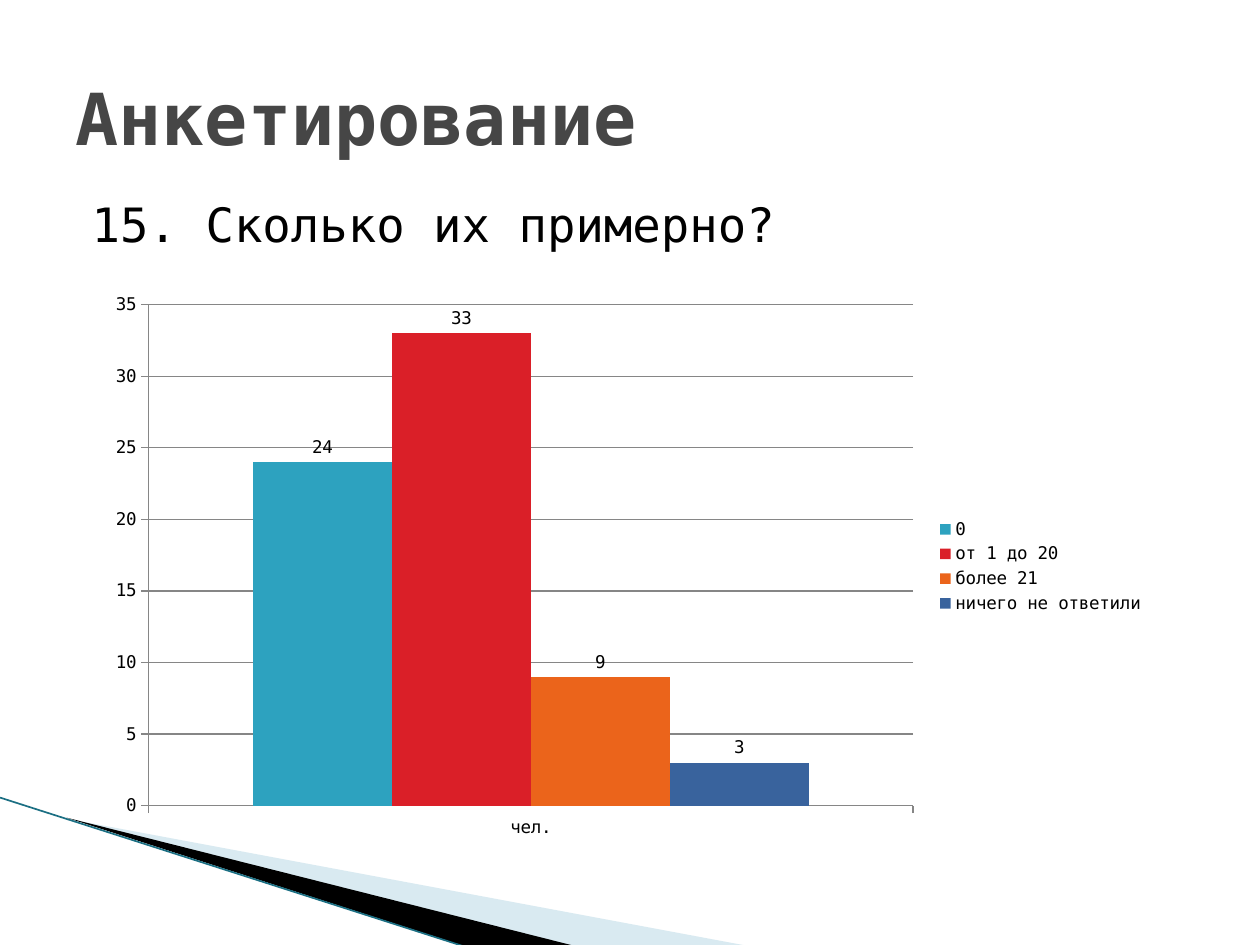
from lxml.etree import SubElement
from pptx import Presentation
from pptx.chart.data import CategoryChartData
from pptx.dml.color import RGBColor
from pptx.enum.chart import XL_CHART_TYPE as ChartType, XL_LABEL_POSITION as LabelPlace
from pptx.enum.chart import XL_LEGEND_POSITION as LegendPlace, XL_TICK_MARK as Tick
from pptx.enum.shapes import MSO_CONNECTOR as Connector
from pptx.enum.text import MSO_ANCHOR as Anchor
from pptx.oxml.ns import qn
from pptx.util import Inches, Pt

FONT = "DejaVu Sans Mono"
COLORS = {
    "title": "464646", "text": "000000", "grid": "868686",
    "pale": "A0CBDC", "dark": "000000", "edge": "1B6F83",
}
ANSWERS = [
    ("0", 24, "2DA2BF"),
    ("от 1 до 20", 33, "DA1F28"),
    ("более 21", 9, "EB641B"),
    ("ничего не ответили", 3, "39639D"),
]
SLIDE = (Inches(10), Inches(7.5))
COLUMNS, ROWS = 100, 75


def place(column, row):
    """Turn a grid position into slide lengths."""
    return round(column * SLIDE[0] / COLUMNS), round(row * SLIDE[1] / ROWS)


def style_font(font, size, color, bold=False):
    """Set the slide's typeface with a size and colour."""
    font.name, font.size, font.bold = FONT, Pt(size), bold
    font.color.rgb = RGBColor.from_string(color)


def add_wedge(page, origin, corners, color, opacity=100):
    """Draw a filled outline with corners relative to its origin."""
    points = [place(origin[0] + x, origin[1] + y) for x, y in corners]
    builder = page.shapes.build_freeform(*points[0])
    builder.add_line_segments(points[1:], close=True)
    wedge = builder.convert_to_shape()
    wedge.shadow.inherit = False
    wedge.fill.solid()
    wedge.fill.fore_color.rgb = RGBColor.from_string(color)
    wedge.line.fill.background()
    if opacity < 100:
        tint = wedge.fill._xPr.find(qn("a:solidFill"))[0]
        SubElement(tint, qn("a:alpha")).set("val", str(opacity * 1000))


def add_swoosh(page, box):
    """Draw the corner decoration inside its box."""
    left, top, width, height = box
    tip = (left + 5.4, top + 1.7)
    add_wedge(page, tip, [(0, 0), (54.1, 10.1), (40.2, 10.1)], COLORS["pale"], 40)
    add_wedge(page, tip, [(-0.1, -0.1), (40.3, 10.1), (31.8, 10.2)], COLORS["dark"])
    edge = page.shapes.add_connector(
        Connector.STRAIGHT, *place(left, top), *place(left + width, top + height))
    edge.line.color.rgb = RGBColor.from_string(COLORS["edge"])
    edge.line.width = Pt(0.95)
    SubElement(edge._element.spPr, qn("a:effectLst"))


def add_text(page, box, text, size, color, bold=False, anchor=Anchor.TOP, indent=None):
    """Write one paragraph in a box, with an optional hanging indent."""
    frame = page.shapes.add_textbox(*place(*box[:2]), *place(*box[2:])).text_frame
    frame.word_wrap = True
    frame.vertical_anchor = anchor
    frame.text = text
    para = frame.paragraphs[0]
    if indent:
        frame.margin_top = Inches(0.08)
        for name, value in zip(("marL", "indent"), indent):
            para._p.get_or_add_pPr().set(name, str(Inches(value)))
    style_font(para.runs[0].font, size, color, bold)


def style_axis(axis):
    """Give an axis crossing ticks and a thin grey line."""
    axis.major_tick_mark = Tick.OUTSIDE
    axis.minor_tick_mark = Tick.NONE
    axis.format.line.color.rgb = RGBColor.from_string(COLORS["grid"])
    axis.format.line.width = Pt(0.75)


def add_answers(page, box):
    """Chart the number of people behind each answer."""
    data = CategoryChartData()
    data.categories = ["чел."]
    for name, count, _ in ANSWERS:
        data.add_series(name, [count])
    chart = page.shapes.add_chart(
        ChartType.COLUMN_CLUSTERED, *place(*box[:2]), *place(*box[2:]), data).chart
    style_font(chart.font, 10, COLORS["text"])
    chart.has_title = False
    chart.has_legend = True
    chart.legend.position = LegendPlace.RIGHT
    chart.legend.include_in_layout = False

    style_axis(chart.category_axis)
    scale = chart.value_axis
    style_axis(scale)
    scale.minimum_scale, scale.maximum_scale, scale.major_unit = 0, 35, 5
    scale.has_major_gridlines = True
    gridline = scale.major_gridlines.format.line
    gridline.color.rgb = RGBColor.from_string(COLORS["grid"])
    gridline.width = Pt(0.75)

    plot = chart.plots[0]
    plot.gap_width, plot.overlap, plot.vary_by_categories = 150, 0, False
    for series, (_, _, color) in zip(plot.series, ANSWERS):
        series.format.fill.solid()
        series.format.fill.fore_color.rgb = RGBColor.from_string(color)
        labels = series.data_labels
        labels.show_value = True
        labels.position = LabelPlace.OUTSIDE_END
        style_font(labels.font, 10, COLORS["text"])


def main():
    """Build the survey slide and save it."""
    deck = Presentation()
    deck.slide_width, deck.slide_height = SLIDE
    page = deck.slides.add_slide(deck.slide_layouts[6])
    add_swoosh(page, (0, 63.3, 37.1, 11.9))
    add_text(page, (5.1, 14.7, 90, 49.5), "15. Сколько их примерно?", 27,
             COLORS["text"], indent=(0.4, -0.28))
    add_text(page, (5, 3, 90, 12.5), "Анкетирование", 41,
             COLORS["title"], bold=True, anchor=Anchor.MIDDLE)
    add_answers(page, (7.5, 22.5, 84.3, 44.9))
    deck.save("out.pptx")


if __name__ == "__main__":
    main()
